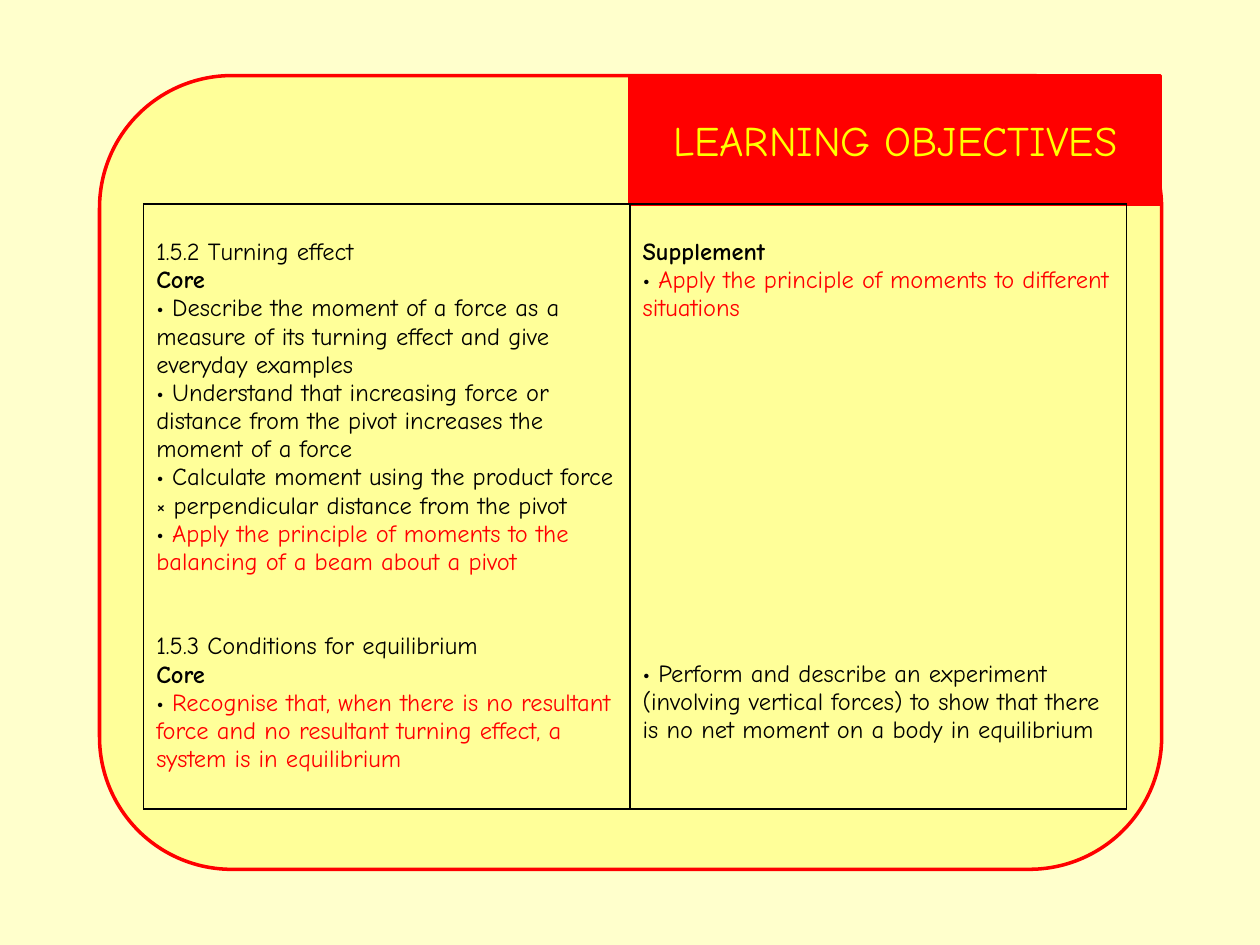
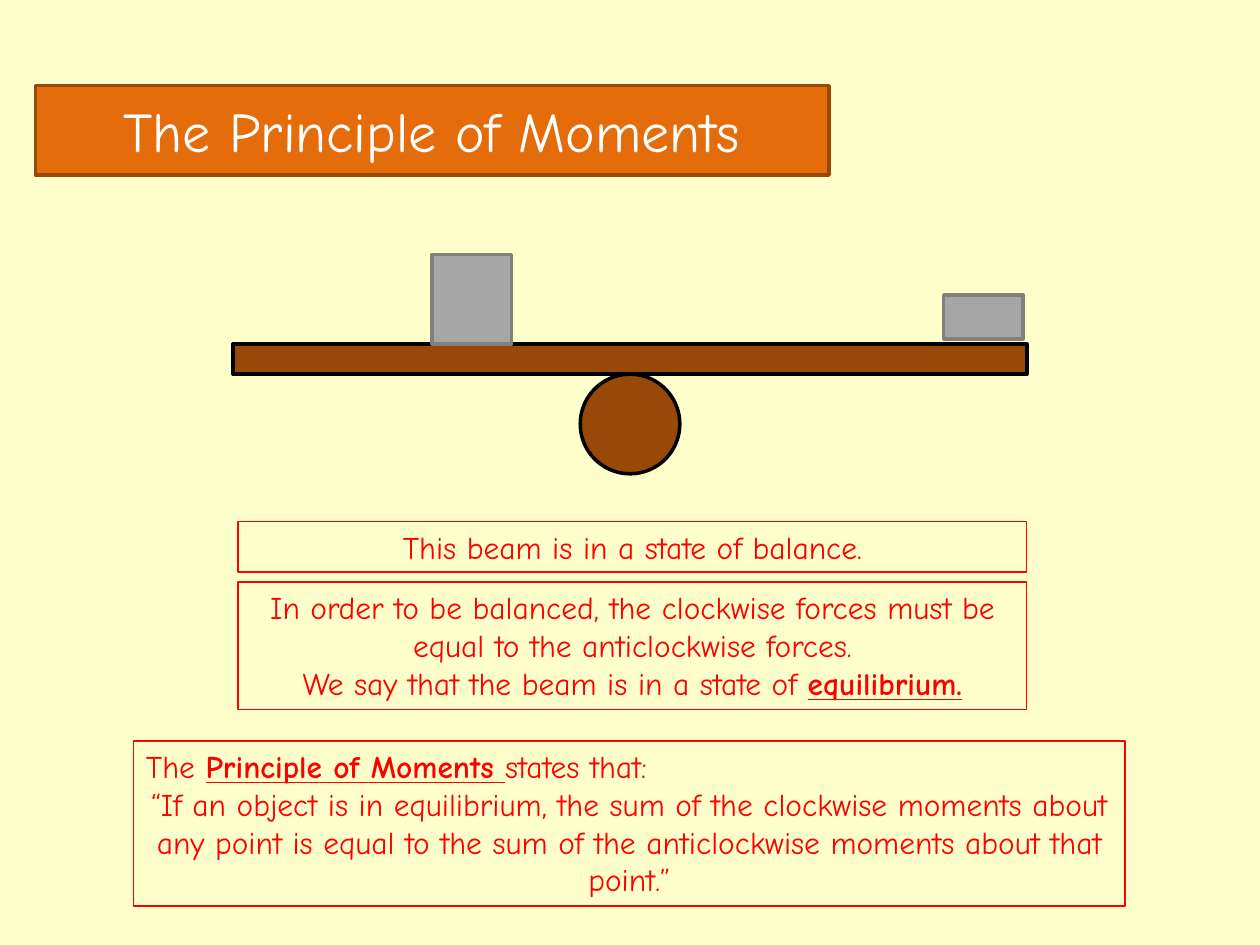
import dataclasses

import lxml.etree
import pptx
import pptx.dml.color
import pptx.enum.shapes
import pptx.enum.text
import pptx.oxml.ns
import pptx.util

SHAPE = pptx.enum.shapes.MSO_SHAPE
ALIGN = pptx.enum.text.PP_ALIGN
ANCHOR = pptx.enum.text.MSO_ANCHOR


@dataclasses.dataclass(frozen=True)
class Theme:
    font: str = "Comic Neue"
    paper: str = "FFFFCC"
    panel: str = "FFFF99"
    red: str = "FF0000"
    yellow: str = "FFFF00"
    orange: str = "E46C0A"
    brown: str = "984807"
    grey: str = "A6A6A6"
    dark_grey: str = "808080"
    black: str = "000000"
    white: str = "FFFFFF"
    objectives_title: int = 24
    topic_title: int = 32
    statement: int = 18
    objective: int = 14
    outline: float = 2
    thin: float = 0.75
    blank_line: float = 16.07


THEME = Theme()

# Both slides use a grid of 100 columns by 75 rows
COLUMNS, ROWS = 100, 75
CELL = 0.1


def grid(count):
    return pptx.util.Inches(count * CELL)


def colour(code):
    return pptx.dml.color.RGBColor.from_string(code)


def paint(shape, fill, line, width=THEME.outline):
    if fill:
        shape.fill.solid()
        shape.fill.fore_color.rgb = colour(fill)
    else:
        shape.fill.background()
    shape.line.color.rgb = colour(line)
    shape.line.width = pptx.util.Pt(width)


def add_block(page, kind, area, fill, line):
    block = page.shapes.add_shape(kind, *map(grid, area))
    block.shadow.inherit = False
    paint(block, fill, line)
    return block


def add_span(para, text, size, ink, bold=False, underline=False):
    span = para.add_run()
    span.text = text
    span.font.name = THEME.font
    span.font.size = pptx.util.Pt(size)
    span.font.color.rgb = colour(ink)
    span.font.bold = bold
    span.font.underline = underline


def next_paragraph(frame, index):
    return frame.add_paragraph() if index else frame.paragraphs[0]


def add_page(deck, title, area, size, ink, fill, line):
    """Add a slide whose title is a filled, rounded band."""
    page = deck.slides.add_slide(deck.slide_layouts[5])
    band = page.shapes.title
    band.left, band.top, band.width, band.height = map(grid, area)
    outline = lxml.etree.SubElement(
        band.element.spPr, pptx.oxml.ns.qn("a:prstGeom"), prst="roundRect")
    lxml.etree.SubElement(outline, pptx.oxml.ns.qn("a:avLst"))
    paint(band, fill, line)
    frame = band.text_frame
    frame.auto_size = pptx.enum.text.MSO_AUTO_SIZE.NONE
    frame.vertical_anchor = ANCHOR.MIDDLE
    frame.paragraphs[0].alignment = ALIGN.CENTER
    add_span(frame.paragraphs[0], title, size, ink)
    return page


def add_statement(page, area, paragraphs):
    """Add a thin red box; each paragraph is (alignment, [(text, stressed)])."""
    box = page.shapes.add_textbox(*map(grid, area))
    paint(box, None, THEME.red, THEME.thin)
    box.text_frame.word_wrap = True
    for index, (alignment, spans) in enumerate(paragraphs):
        para = next_paragraph(box.text_frame, index)
        para.alignment = alignment
        for text, stressed in spans:
            add_span(para, text, THEME.statement, THEME.red, stressed, stressed)


def add_borders(cell):
    properties = cell._tc.get_or_add_tcPr()
    for index, side in enumerate(("lnL", "lnR", "lnT", "lnB")):
        edge = lxml.etree.Element(
            pptx.oxml.ns.qn("a:" + side), w=str(pptx.util.Pt(1)))
        fill = lxml.etree.SubElement(edge, pptx.oxml.ns.qn("a:solidFill"))
        lxml.etree.SubElement(
            fill, pptx.oxml.ns.qn("a:srgbClr"), val=THEME.black)
        properties.insert(index, edge)


def fill_objectives(cell, objectives):
    """Each objective is (style, text, blank lines above)."""
    cell.fill.background()
    add_borders(cell)
    cell.margin_top = grid(2.73)
    for index, (style, text, gap) in enumerate(objectives):
        para = next_paragraph(cell.text_frame, index)
        para.space_before = pptx.util.Pt(gap * THEME.blank_line)
        if style in ("point", "key point"):
            add_span(para, "• ", THEME.objective, THEME.black)
        ink = THEME.red if style == "key point" else THEME.black
        add_span(para, text, THEME.objective, ink, style == "heading")


def add_objectives_table(page, area, widths, columns):
    table = page.shapes.add_table(1, len(columns), *map(grid, area)).table
    table.first_row = table.horz_banding = False
    for index, objectives in enumerate(columns):
        table.columns[index].width = grid(widths[index])
        fill_objectives(table.cell(0, index), objectives)


CORE = [
    ("topic", "1.5.2 Turning effect", 0),
    ("heading", "Core", 0),
    ("point", "Describe the moment of a force as a measure of its turning "
              "effect and give everyday examples", 0),
    ("point", "Understand that increasing force or distance from the pivot "
              "increases the moment of a force", 0),
    ("point", "Calculate moment using the product force × perpendicular "
              "distance from the pivot", 0),
    ("key point", "Apply the principle of moments to the balancing of a beam "
                  "about a pivot", 0),
    ("topic", "1.5.3 Conditions for equilibrium", 2),
    ("heading", "Core", 0),
    ("key point", "Recognise that, when there is no resultant force and no "
                  "resultant turning effect, a system is in equilibrium", 0),
]
SUPPLEMENT = [
    ("heading", "Supplement", 0),
    ("key point", "Apply the principle of moments to different situations", 0),
    ("point", "Perform and describe an experiment (involving vertical forces) "
              "to show that there is no net moment on a body in equilibrium", 12),
]


def build_objectives(deck):
    page = add_page(deck, "LEARNING OBJECTIVES", (50, 6, 42.1, 10.2),
                    THEME.objectives_title, THEME.yellow, THEME.red, THEME.red)
    panel = add_block(page, SHAPE.ROUNDED_RECTANGLE, (7.9, 6, 84.3, 63),
                      THEME.panel, THEME.red)
    # The title band lies on top of the panel
    panel.element.addnext(page.shapes.title.element)
    add_objectives_table(page, (11.4, 16.2, 78, 48), (38.6, 39.4),
                         (CORE, SUPPLEMENT))


def add_balance(page):
    beam_width, beam_top, beam_height, pivot = 63, 27.3, 2.4, 7.9
    add_block(page, SHAPE.OVAL,
              ((COLUMNS - pivot) / 2, beam_top + beam_height, pivot, pivot),
              THEME.brown, THEME.black)
    add_block(page, SHAPE.RECTANGLE,
              ((COLUMNS - beam_width) / 2, beam_top, beam_width, beam_height),
              THEME.brown, THEME.black)
    # Loads: left, bottom, height
    for left, bottom, height in ((34.3, beam_top, 7.1), (74.9, 26.9, 3.5)):
        add_block(page, SHAPE.RECTANGLE, (left, bottom - height, 6.3, height),
                  THEME.grey, THEME.dark_grey)


def build_principle(deck):
    page = add_page(deck, "The Principle of Moments", (2.8, 6.8, 63, 7.1),
                    THEME.topic_title, THEME.white, THEME.orange, THEME.brown)
    add_balance(page)

    # Statements below the beam
    add_statement(page, (18.9, 41.4, 62.6, 4), [
        (ALIGN.CENTER, [("This beam is in a state of balance.", False)])])
    add_statement(page, (18.9, 46.2, 62.6, 10.1), [
        (ALIGN.CENTER, [("In order to be balanced, the clockwise forces must "
                         "be equal to the anticlockwise forces.", False)]),
        (ALIGN.CENTER, [("We say that the beam is in a state of ", False),
                        ("equilibrium.", True)])])
    add_statement(page, (10.6, 58.8, 78.7, 13.1), [
        (ALIGN.LEFT, [("The ", False), ("Principle of Moments ", True),
                      ("states that:", False)]),
        (ALIGN.CENTER, [("“If an object is in equilibrium, the sum of the "
                         "clockwise moments about any point is equal to the "
                         "sum of the anticlockwise moments about that point.”",
                         False)])])


def main():
    deck = pptx.Presentation()
    deck.slide_width, deck.slide_height = grid(COLUMNS), grid(ROWS)
    paper = deck.slide_master.background.fill
    paper.solid()
    paper.fore_color.rgb = colour(THEME.paper)
    build_objectives(deck)
    build_principle(deck)
    deck.save("out.pptx")


if __name__ == "__main__":
    main()
